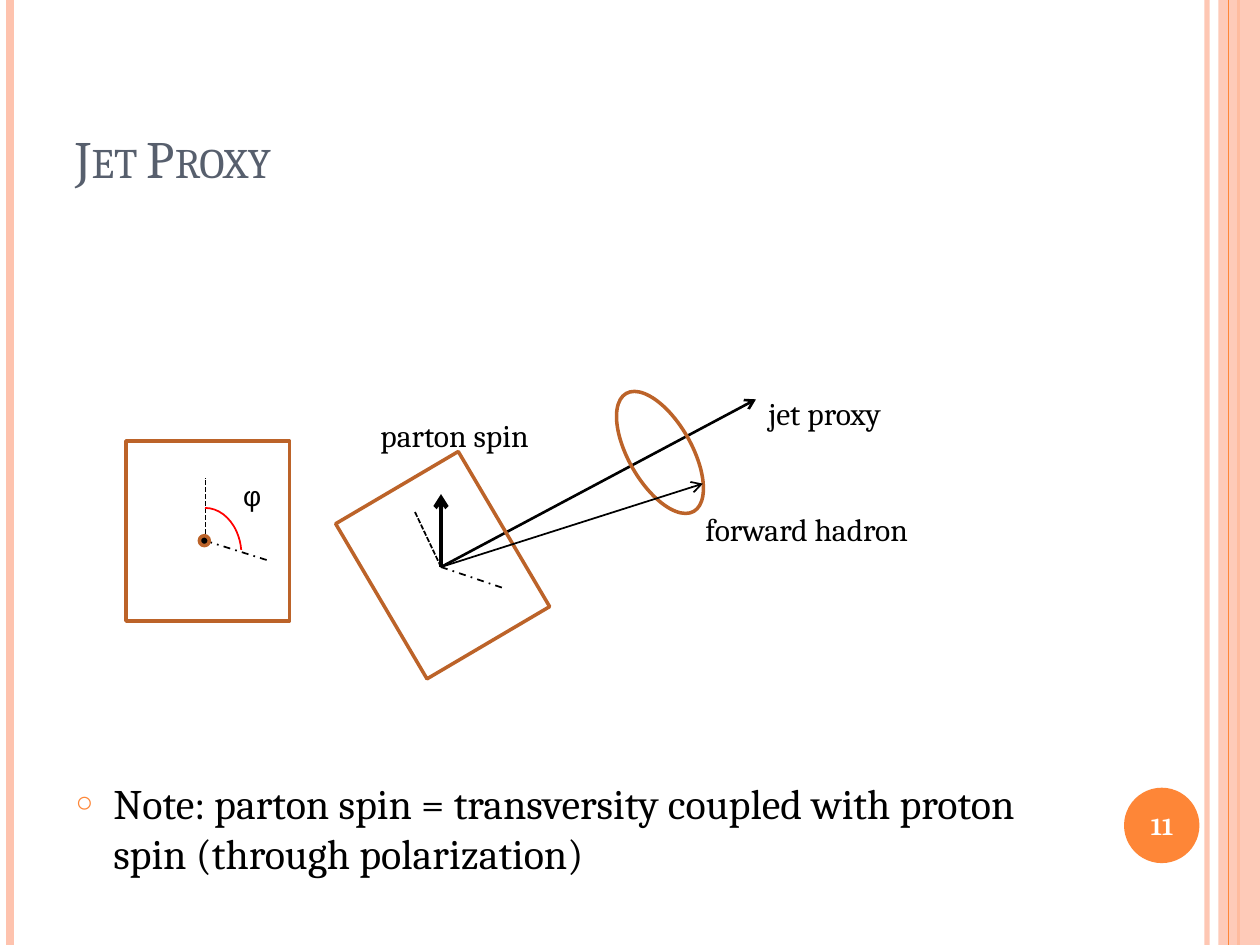
from dataclasses import dataclass
from typing import Optional

from lxml import etree
from pptx import Presentation
from pptx import util as u
from pptx.dml.color import RGBColor
from pptx.enum import dml, shapes, text
from pptx.oxml.ns import qn


@dataclass(frozen=True)
class Theme:
    accent: str = "FE8637"
    pale: str = "FEC3AE"
    outline: str = "BC6329"
    heading: str = "575F6D"
    ink: str = "000000"
    angle: str = "FF0000"
    white: str = "FFFFFF"
    font: str = "Cambria"
    symbol_font: str = "Arial"
    title_size: int = 30
    body_size: int = 24
    label_size: int = 18
    symbol_size: int = 16
    number_size: int = 14


THEME = Theme()


@dataclass(frozen=True)
class Line:
    """A straight line, in centimetres, with its width in points."""
    start: tuple[float, float]
    end: tuple[float, float]
    width: float = 1
    color: str = THEME.ink
    dash: Optional[dml.MSO_LINE] = None
    arrow: bool = False
    opacity: int = 100


@dataclass(frozen=True)
class Figure:
    """A preset shape; box is left, top, width, height in centimetres."""
    kind: shapes.MSO_SHAPE
    box: tuple[float, float, float, float]
    fill: Optional[str] = None
    line: Optional[str] = None
    width: float = 2
    rotation: float = 0
    opacity: int = 100


@dataclass(frozen=True)
class Label:
    words: str
    box: tuple[float, float, float, float]
    size: int = THEME.label_size
    font: str = THEME.font
    color: str = THEME.ink


def set_opacity(properties, percent: int) -> None:
    if percent < 100:
        color = next(properties.iter(qn("a:srgbClr")))
        etree.SubElement(color, qn("a:alpha")).set("val", str(percent * 1000))


def draw_line(container, line: Line):
    connector = container.add_connector(
        shapes.MSO_CONNECTOR.STRAIGHT,
        *(u.Cm(value) for value in line.start + line.end))
    connector.line.width = u.Pt(line.width)
    connector.line.color.rgb = RGBColor.from_string(line.color)
    if line.dash is not None:
        connector.line.dash_style = line.dash
    properties = connector.element.spPr
    if line.arrow:
        outline = properties.find(qn("a:ln"))
        etree.SubElement(outline, qn("a:tailEnd")).set("type", "arrow")
    set_opacity(properties, line.opacity)
    etree.SubElement(properties, qn("a:effectLst"))
    return connector


def draw_figure(container, figure: Figure):
    shape = container.add_shape(figure.kind, *(u.Cm(value) for value in figure.box))
    shape.shadow.inherit = False
    shape.rotation = figure.rotation
    if figure.fill:
        shape.fill.solid()
        shape.fill.fore_color.rgb = RGBColor.from_string(figure.fill)
        set_opacity(shape.element.spPr, figure.opacity)
    else:
        shape.fill.background()
    if figure.line:
        shape.line.color.rgb = RGBColor.from_string(figure.line)
        shape.line.width = u.Pt(figure.width)
    else:
        shape.line.fill.background()
    return shape


def write(shape, words: str, size: int, color: str, font: str = THEME.font):
    """Put one formatted paragraph in a shape and return the paragraph."""
    shape.text_frame.text = words
    paragraph = shape.text_frame.paragraphs[0]
    run_font = paragraph.runs[0].font
    run_font.size = u.Pt(size)
    run_font.name = font
    run_font.color.rgb = RGBColor.from_string(color)
    return paragraph


def draw_label(container, label: Label):
    box = container.add_textbox(*(u.Cm(value) for value in label.box))
    box.text_frame.word_wrap = False
    write(box, label.words, label.size, label.color, label.font)
    return box


def place(shape, left: float, top: float, width: float, height: float) -> None:
    shape.left, shape.top = u.Cm(left), u.Cm(top)
    shape.width, shape.height = u.Cm(width), u.Cm(height)
    shape.text_frame.vertical_anchor = text.MSO_ANCHOR.BOTTOM
    shape.text_frame.auto_size = text.MSO_AUTO_SIZE.NONE


def draw_frame(container, height: float) -> None:
    """Edge stripes and the page number badge."""
    def stripe(x: float, width: float, color: str, opacity: int = 100) -> None:
        draw_line(container, Line((x, 0), (x, height), width, color, opacity=opacity))

    stripe(24.33, 3, THEME.pale, 93)
    stripe(0.2, 4.5, THEME.pale)
    stripe(24.97, 1.5, THEME.accent)
    draw_figure(container, Figure(shapes.MSO_SHAPE.RECTANGLE, (24.56, 0, 0.84, height),
                                  fill=THEME.pale, opacity=87))
    stripe(24.77, 0.75, THEME.accent)
    draw_figure(container, Figure(shapes.MSO_SHAPE.OVAL, (22.66, 15.88, 1.52, 1.52),
                                  fill=THEME.accent))
    number = draw_label(container, Label("11", (22.58, 15.93, 1.7, 1.45),
                                         THEME.number_size, color=THEME.white))
    number.text_frame.word_wrap = True
    number.text_frame.vertical_anchor = text.MSO_ANCHOR.MIDDLE
    paragraph = number.text_frame.paragraphs[0]
    paragraph.alignment = text.PP_ALIGN.CENTER
    paragraph.runs[0].font.bold = True


def fill_placeholders(slide) -> None:
    title = slide.shapes.title
    place(title, 1.27, 0.76, 20.75, 3.18)
    paragraph = write(title, "Jet Proxy", THEME.title_size, THEME.heading)
    paragraph.alignment = text.PP_ALIGN.LEFT
    paragraph.runs[0].font._element.set("cap", "small")

    body = slide.placeholders[1]
    place(body, 1.27, 15.29, 20.75, 2.54)
    paragraph = write(body, "Note: parton spin = transversity coupled with proton "
                            "spin (through polarization)", THEME.body_size, THEME.ink)
    paragraph.space_before = u.Pt(6)
    properties = paragraph._p.get_or_add_pPr()
    properties.set("marL", str(u.Cm(0.76)))
    properties.set("indent", str(-u.Cm(0.76)))
    bullet_color = etree.SubElement(properties, qn("a:buClr"))
    etree.SubElement(bullet_color, qn("a:srgbClr")).set("val", THEME.accent)
    etree.SubElement(properties, qn("a:buSzPct")).set("val", "70000")
    etree.SubElement(properties, qn("a:buChar")).set("char", "○")


def draw_jet(container) -> None:
    """Jet axis, hadron and spin, all leaving the interaction point."""
    vertex = (8.89, 11.43)
    draw_line(container, Line(vertex, (15.24, 8.05), 1.5, arrow=True))
    draw_figure(container, Figure(shapes.MSO_SHAPE.RECTANGLE, (7.49, 9.58, 2.87, 3.63),
                                  line=THEME.outline, rotation=329.5))
    draw_figure(container, Figure(shapes.MSO_SHAPE.OVAL, (12.67, 7.75, 1.27, 2.74),
                                  line=THEME.outline, rotation=330.2))
    for line in (Line(vertex, (8.89, 9.96), 2.5, arrow=True),
                 Line(vertex, (8.36, 10.31), dash=dml.MSO_LINE.SQUARE_DOT),
                 Line(vertex, (14.17, 9.75), arrow=True),
                 Line(vertex, (10.16, 11.86), dash=dml.MSO_LINE.DASH_DOT)):
        draw_line(container, line)
    for label in (Label("jet proxy", (15.24, 7.82, 3.12, 1.02)),
                  Label("forward hadron", (13.97, 10.16, 5.13, 1.02)),
                  Label("parton spin", (7.42, 8.26, 3.91, 1.02))):
        draw_label(container, label)


def draw_front_view(container) -> None:
    """Transverse plane seen along the jet axis, with the angle φ."""
    center = (4.14, 10.9)
    draw_figure(container, Figure(shapes.MSO_SHAPE.RECTANGLE, (2.54, 8.89, 3.3, 3.63),
                                  line=THEME.outline))
    draw_line(container, Line(center, (4.14, 9.63), dash=dml.MSO_LINE.SQUARE_DOT))
    draw_line(container, Line(center, (5.41, 11.3), dash=dml.MSO_LINE.DASH_DOT))
    draw_figure(container, Figure(shapes.MSO_SHAPE.OVAL, (4.02, 10.8, 0.2, 0.2),
                                  fill=THEME.ink, line=THEME.outline))
    arc = draw_figure(container, Figure(shapes.MSO_SHAPE.ARC, (3.4, 10.24, 1.47, 1.91),
                                        line=THEME.angle, width=1))
    arc.adjustments[0], arc.adjustments[1] = 162, 210.91
    draw_label(container, Label("φ", (4.65, 9.53, 0.81, 0.94),
                                THEME.symbol_size, THEME.symbol_font))


def main() -> None:
    presentation = Presentation()
    presentation.slide_width, presentation.slide_height = u.Cm(25.4), u.Cm(19.05)
    slide = presentation.slides.add_slide(presentation.slide_layouts[1])
    draw_frame(slide.shapes, 19.05)
    fill_placeholders(slide)
    draw_jet(slide.shapes)
    draw_front_view(slide.shapes.add_group_shape().shapes)
    presentation.save("out.pptx")


if __name__ == "__main__":
    main()
